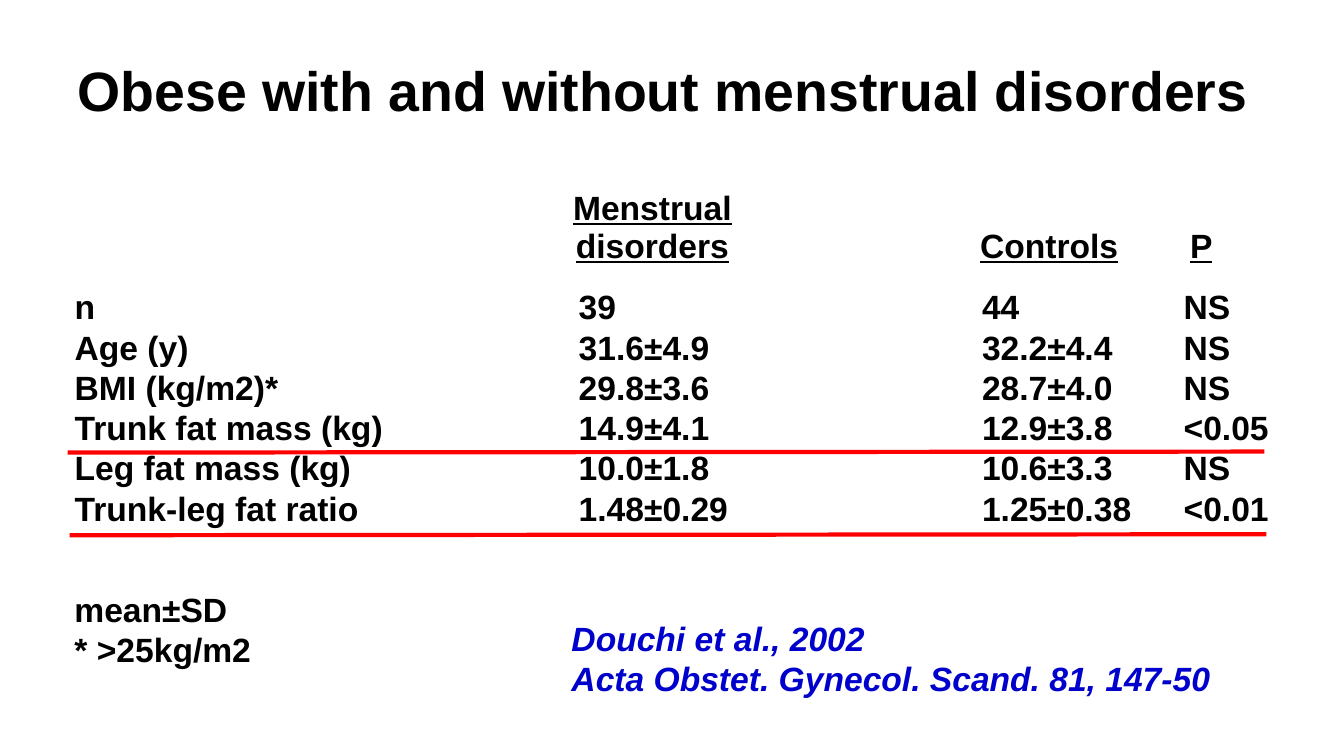
import pptx
import pptx.util
import pptx.dml.color
import pptx.enum.shapes
import pptx.enum.text
import lxml.etree

Inches = pptx.util.Inches
Align = pptx.enum.text.PP_ALIGN
Anchor = pptx.enum.text.MSO_ANCHOR

COLORS = {"text": "000000", "citation": "0000CC", "rule": "FF0000"}
HEADERS = ["", "Menstrual\ndisorders", "Controls", "P"]
HEADER_WIDTHS = [4.93, 1.8, 1.67, 0.69]
COLUMN_WIDTHS = [4.93, 4, 2, 1.3]
ROWS = [
    ["n", "39", "44", "NS"],
    ["Age (y)", "31.6±4.9", "32.2±4.4", "NS"],
    ["BMI (kg/m2)*", "29.8±3.6", "28.7±4.0", "NS"],
    ["Trunk fat mass (kg)", "14.9±4.1", "12.9±3.8", "<0.05"],
    ["Leg fat mass (kg)", "10.0±1.8", "10.6±3.3", "NS"],
    ["Trunk-leg fat ratio", "1.48±0.29", "1.25±0.38", "<0.01"],
]


def rgb(name):
    return pptx.dml.color.RGBColor.from_string(COLORS[name])


def set_text(tf, text, size=24, color="text", align=Align.LEFT,
             italic=False, underline=False):
    tf.text = text
    for p in tf.paragraphs:
        p.alignment = align
        for r in p.runs:
            r.font.name = "Arial"
            r.font.size = pptx.util.Pt(size)
            r.font.bold = True
            r.font.italic = italic
            r.font.underline = underline
            r.font.color.rgb = rgb(color)


def add_title(s, text):
    sp = s.shapes.title
    sp.left, sp.top = Inches(0.67), Inches(0.3)
    sp.width, sp.height = Inches(12), Inches(1.25)
    tf = sp.text_frame
    tf.auto_size = pptx.enum.text.MSO_AUTO_SIZE.NONE
    tf.vertical_anchor = Anchor.MIDDLE
    set_text(tf, text, size=39.6)
    tf.paragraphs[0].line_spacing = 0.9


def add_text(s, text, left, top, width, height, **style):
    sp = s.shapes.add_textbox(Inches(left), Inches(top), Inches(width), Inches(height))
    sp.text_frame.word_wrap = False
    set_text(sp.text_frame, text, **style)


def add_results(s):
    row_height, header_height = 0.4, 1.05
    table = s.shapes.add_table(
        len(ROWS) + 1, len(HEADERS), Inches(0.64), Inches(1.82),
        Inches(sum(COLUMN_WIDTHS)),
        Inches(header_height + row_height * len(ROWS))).table
    table.first_row = False
    table.horz_banding = False
    for column, width in zip(table.columns, COLUMN_WIDTHS):
        column.width = Inches(width)
    for i, values in enumerate([HEADERS] + ROWS):
        header = i == 0
        table.rows[i].height = Inches(header_height if header else row_height)
        for j, value in enumerate(values):
            cell = table.cell(i, j)
            cell.fill.background()
            cell.margin_top = cell.margin_bottom = cell.margin_right = 0
            if header:
                cell.vertical_anchor = Anchor.BOTTOM
                cell.margin_left = 0
                cell.margin_bottom = Inches(0.24)
                cell.margin_right = Inches(COLUMN_WIDTHS[j] - HEADER_WIDTHS[j])
                set_text(cell.text_frame, value, align=Align.CENTER, underline=True)
            else:
                cell.margin_left = Inches(0.1 if j == 0 else 0.17)
                set_text(cell.text_frame, value)


def add_rule(s, left, top):
    line = s.shapes.add_connector(
        pptx.enum.shapes.MSO_CONNECTOR.STRAIGHT,
        Inches(left), Inches(top), Inches(left + 11.87), Inches(top - 0.01))
    line.line.color.rgb = rgb("rule")
    line.line.width = pptx.util.Pt(3)
    lxml.etree.SubElement(line._element.spPr, pptx.oxml.ns.qn("a:effectLst"))


def main():
    prs = pptx.Presentation()
    prs.slide_width, prs.slide_height = Inches(13.33), Inches(7.5)
    s = prs.slides.add_slide(prs.slide_layouts[5])
    add_title(s, "Obese with and without menstrual disorders")
    add_results(s)
    add_text(s, "mean±SD\n* >25kg/m2", 0.64, 5.79, 1.97, 0.91)
    add_text(s, "Douchi et al., 2002\nActa Obstet. Gynecol. Scand. 81, 147-50",
             5.57, 6.08, 6.6, 0.91, color="citation", italic=True)
    add_rule(s, 0.67, 4.49)
    add_rule(s, 0.69, 5.31)
    prs.save("out.pptx")


if __name__ == "__main__":
    main()
